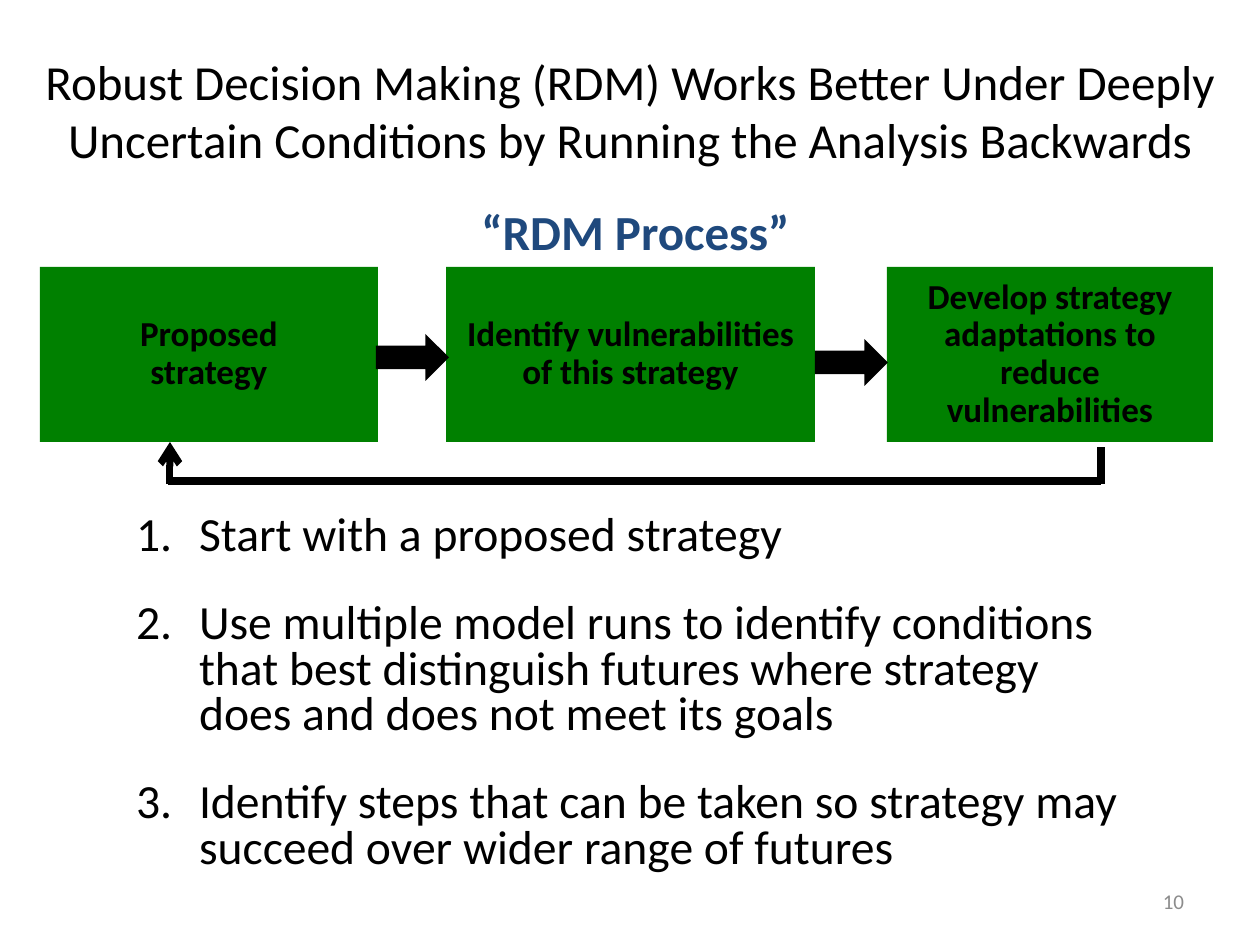
from dataclasses import dataclass

from lxml.etree import SubElement
from pptx import Presentation
from pptx.dml.color import RGBColor
from pptx.enum.shapes import MSO_CONNECTOR, MSO_SHAPE
from pptx.enum.text import MSO_ANCHOR, PP_ALIGN
from pptx.oxml.ns import qn
from pptx.util import Emu, Pt

PX_PER_INCH = 126


@dataclass(frozen=True)
class Theme:
    font: str = "Calibri"
    ink: str = "000000"
    heading: str = "1F497D"
    step: str = "008000"
    muted: str = "8C8C8C"
    title_size: float = 28
    list_size: float = 27.2
    step_size: float = 20
    number_size: float = 12


THEME = Theme()


def px(length):
    return Emu(round(length * 914400 / PX_PER_INCH))


def rect(left, top, width, height):
    return [px(length) for length in (left, top, width, height)]


def write(shape, paragraphs, size, color=THEME.ink, bold=False, align=PP_ALIGN.LEFT,
          anchor=MSO_ANCHOR.TOP, spacing=None, after=None, insets=(13, 6, 13, 6)):
    """Fill a shape with paragraphs; a newline inside one is a line break."""
    frame = shape.text_frame
    frame.word_wrap = True
    frame.vertical_anchor = anchor
    (frame.margin_left, frame.margin_top,
     frame.margin_right, frame.margin_bottom) = [px(inset) for inset in insets]
    for index, text in enumerate(paragraphs):
        para = frame.add_paragraph() if index else frame.paragraphs[0]
        para.alignment = align
        if spacing:
            para.line_spacing = spacing
        if after:
            para.space_after = Pt(after)
        for row, line in enumerate(text.split("\n")):
            if row:
                para.add_line_break()
            span = para.add_run()
            span.text = line
            font = span.font
            font.name, font.size, font.bold = THEME.font, Pt(size), bold
            font.color.rgb = RGBColor.from_string(color)
    return frame


def add_block(page, kind, box, color):
    shape = page.shapes.add_shape(kind, *rect(*box))
    shape.shadow.inherit = False
    shape.fill.solid()
    shape.fill.fore_color.rgb = RGBColor.from_string(color)
    shape.line.fill.background()
    return shape


def add_line(page, start, end, width, arrow=False):
    line = page.shapes.add_connector(
        MSO_CONNECTOR.STRAIGHT, *[px(length) for length in start + end])
    line.line.color.rgb = RGBColor.from_string(THEME.ink)
    line.line.width = Pt(width)
    if arrow:
        SubElement(line.line._get_or_add_ln(), qn("a:tailEnd"), type="arrow")
    SubElement(line._element.spPr, qn("a:effectLst"))


def add_title(page, box):
    title = page.shapes.title
    title.left, title.top, title.width, title.height = rect(*box)
    # The deep bottom inset lifts the two lines above the box's middle
    write(title, ["Robust Decision Making (RDM) Works Better Under Deeply "
                  "Uncertain Conditions by Running the Analysis Backwards"],
          THEME.title_size, align=PP_ALIGN.CENTER, anchor=MSO_ANCHOR.MIDDLE,
          insets=(13, 6, 13, 59))


def add_process(page, box):
    left, top, width, height = box

    # Heading
    heading = page.shapes.add_textbox(*rect(left + 343, top, 505, 39))
    write(heading, ["“RDM Process”"], THEME.title_size, THEME.heading, bold=True,
          align=PP_ALIGN.CENTER, spacing=0.9, insets=(0, 0, 0, 0))

    # Steps: offset, width, label
    steps = [
        (0, 338, "Proposed\nstrategy"),
        (406, 369, "Identify vulnerabilities of this strategy"),
        (847, 326, "Develop strategy adaptations to reduce vulnerabilities"),
    ]
    step_top, step_height = top + 59, 175
    for offset, step_width, label in steps:
        step = add_block(page, MSO_SHAPE.RECTANGLE,
                         (left + offset, step_top, step_width, step_height), THEME.step)
        write(step, [label], THEME.step_size, bold=True, align=PP_ALIGN.CENTER,
              anchor=MSO_ANCHOR.MIDDLE, spacing=0.9)

    # Arrows between steps
    for offset, drop in ((336, 67), (775, 72)):
        add_block(page, MSO_SHAPE.RIGHT_ARROW,
                  (left + offset, step_top + drop, 73, 47), THEME.ink)

    # Feedback loop from the last step to the first
    start, end, bottom = left + 1061, left + 130, top + height
    add_line(page, (end - 2, bottom - 3), (start, bottom - 3), 4.5)
    add_line(page, (start, bottom), (start, bottom - 37), 4.5)
    add_line(page, (end, bottom), (end, step_top + step_height), 4, arrow=True)


def add_numbered_list(page, box):
    items = [
        "Start with a proposed strategy",
        "Use multiple model runs to identify conditions that best distinguish "
        "futures where strategy does and does not meet its goals",
        "Identify steps that can be taken so strategy may succeed over wider "
        "range of futures",
    ]
    frame = write(page.shapes.add_textbox(*rect(*box)), items, THEME.list_size,
                  spacing=0.8, after=24)
    for para in frame.paragraphs:
        properties = para._p.get_or_add_pPr()
        properties.set("marL", str(px(63)))
        properties.set("indent", str(-px(63)))
        SubElement(properties, qn("a:buFont"), typeface=THEME.font)
        SubElement(properties, qn("a:buAutoNum"), type="arabicPeriod")


def add_page_number(page, box):
    write(page.shapes.add_textbox(*rect(*box)), ["10"], THEME.number_size, THEME.muted,
          align=PP_ALIGN.RIGHT, anchor=MSO_ANCHOR.MIDDLE)


def main():
    deck = Presentation()
    deck.slide_width, deck.slide_height = px(1260), px(945)
    page = deck.slides.add_slide(deck.slide_layouts[5])
    add_title(page, (0, 94, 1260, 85))
    add_numbered_list(page, (123, 509, 1016, 379))
    add_process(page, (40, 208, 1174, 276))
    add_page_number(page, (903, 876, 294, 50))
    deck.save("out.pptx")


if __name__ == "__main__":
    main()
